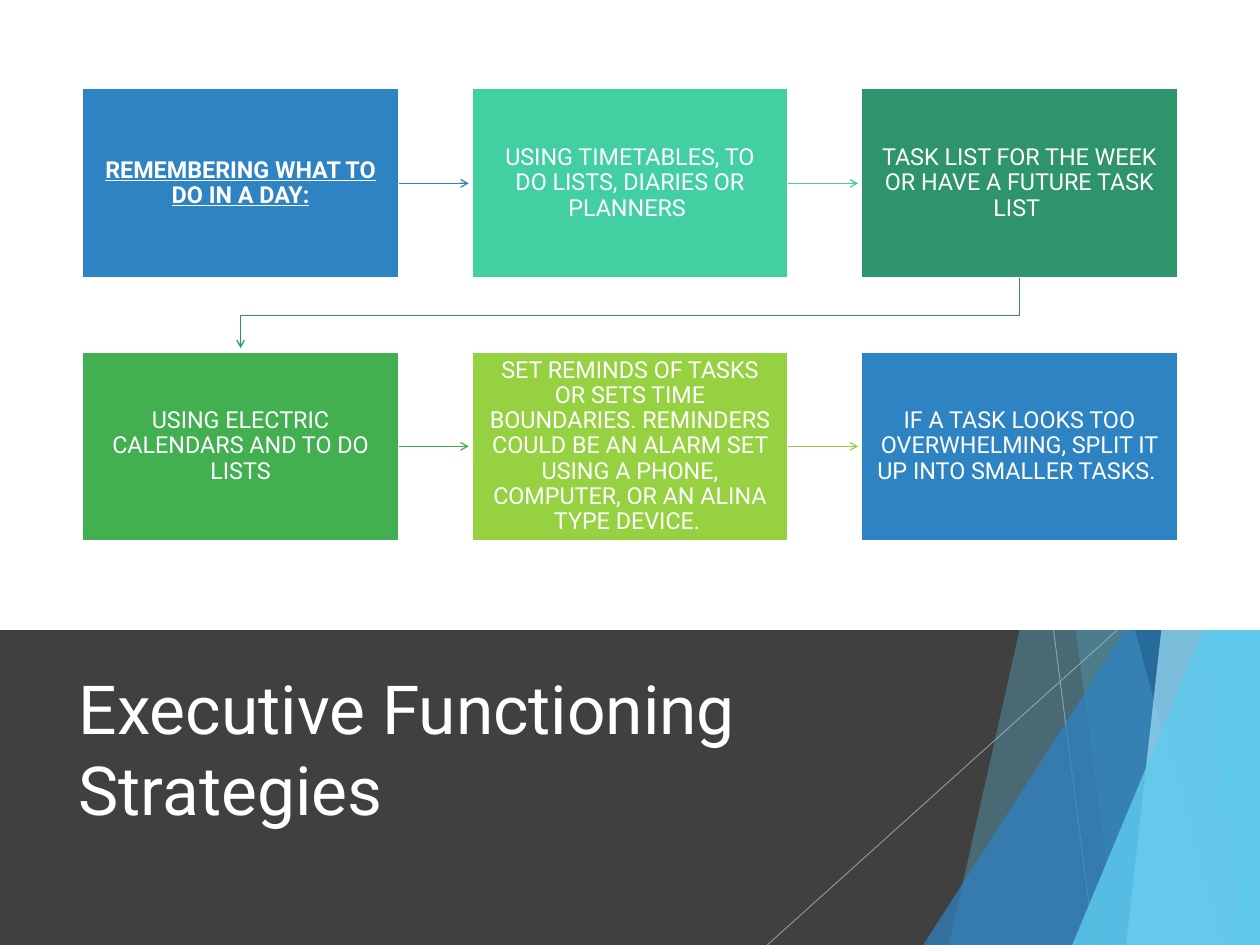
from dataclasses import dataclass

from lxml import etree
from pptx import Presentation
from pptx import util as u
from pptx.dml.color import RGBColor
from pptx.enum import shapes, text
from pptx.oxml.ns import qn

SLIDE_WIDTH, SLIDE_HEIGHT = 14.22, 10.67
BAND_TOP = SLIDE_HEIGHT * 2 / 3
BOX_WIDTH, BOX_HEIGHT = 3.57, 2.14
BOX_LEFT, BOX_TOP = 0.93, 1.0
COLUMNS = 3
COLUMN_STEP = (SLIDE_WIDTH - 2 * BOX_LEFT - BOX_WIDTH) / (COLUMNS - 1)
ROW_STEP = 2.97
ARROW_LENGTH = 0.79
WHITE = "FFFFFF"


@dataclass
class Step:
    wording: str
    color: str
    heading: bool = False


@dataclass
class Facet:
    """Translucent panel from a slanted left edge to the slide's right edge."""
    top_x: float
    bottom_x: float
    color: str
    opacity: int
    top: float = 0


STEPS = [
    Step("REMEMBERING WHAT TO DO IN A DAY:", "2E83C3", heading=True),
    Step("USING TIMETABLES, TO DO LISTS, DIARIES OR PLANNERS ", "42D0A2"),
    Step("TASK LIST FOR THE WEEK OR HAVE A FUTURE TASK LIST ", "2E946B"),
    Step("USING ELECTRIC CALENDARS AND TO DO LISTS", "42B051"),
    Step("SET REMINDS OF TASKS OR SETS TIME BOUNDARIES. REMINDERS COULD BE "
         "AN ALARM SET USING A PHONE, COMPUTER, OR AN ALINA TYPE DEVICE. ", "96D141"),
    Step("IF A TASK LOOKS TOO OVERWHELMING, SPLIT IT UP INTO SMALLER TASKS. ", "2E83C3"),
]

FACETS = [
    Facet(13.1, 10.71, "5FCBEF", 30),
    Facet(11.2, 12.61, "5FCBEF", 20),
    Facet(SLIDE_WIDTH, 10.42, "2E83C3", 72, top=4.74),
    Facet(10.89, 13.77, "226292", 70),
    Facet(13.9, 12.71, "9FE0F5", 70),
    Facet(12.76, 14.05, "5FCBEF", 65),
    Facet(SLIDE_WIDTH, 12.1, "5FCBEF", 80, top=5.58),
]

# Top and bottom x of the thin lines crossing the band
BAND_LINES = [(11.89, 12.35), (12.61, 8.66)]


def rgb(color: str) -> RGBColor:
    return RGBColor.from_string(color)


def set_opacity(shape, percent: int) -> None:
    color = next(shape._element.spPr.iter(qn("a:srgbClr")))
    etree.SubElement(color, qn("a:alpha")).set("val", str(percent * 1000))


def style_line(shape, color: str, width: float, arrow: bool = False) -> None:
    shape.line.color.rgb = rgb(color)
    shape.line.width = u.Pt(width)
    if arrow:
        line = shape.line._get_or_add_ln()
        etree.SubElement(line, qn("a:tailEnd")).set("type", "arrow")


def add_line(slide, start: tuple, end: tuple, color: str, width: float, arrow: bool = False):
    connector = slide.shapes.add_connector(
        shapes.MSO_CONNECTOR.STRAIGHT, *(u.Inches(value) for value in start + end))
    style_line(connector, color, width, arrow)
    etree.SubElement(connector._element.spPr, qn("a:effectLst"))
    return connector


def add_path(slide, points: list, closed: bool):
    corners = [(u.Inches(x), u.Inches(y)) for x, y in points]
    builder = slide.shapes.build_freeform(*corners[0])
    builder.add_line_segments(corners[1:], close=closed)
    shape = builder.convert_to_shape()
    shape.shadow.inherit = False
    return shape


def fill_plain(shape, color: str) -> None:
    shape.fill.solid()
    shape.fill.fore_color.rgb = rgb(color)
    shape.line.fill.background()


def add_preset(slide, kind, left: float, top: float, width: float, height: float, color: str):
    shape = slide.shapes.add_shape(
        kind, *(u.Inches(value) for value in (left, top, width, height)))
    shape.shadow.inherit = False
    fill_plain(shape, color)
    return shape


def write_text(shape, wording: str, *, size: float, align, color: str = WHITE,
               bold: bool = False, underline: bool = False,
               inset: float | None = None, spacing: float | None = None) -> None:
    frame = shape.text_frame
    frame.word_wrap = True
    frame.vertical_anchor = text.MSO_ANCHOR.MIDDLE
    if inset is not None:
        frame.margin_left = frame.margin_right = u.Inches(inset)
        frame.margin_top = frame.margin_bottom = u.Inches(inset)
    paragraph = frame.paragraphs[0]
    paragraph.alignment = align
    if spacing is not None:
        paragraph.line_spacing = spacing
    run = paragraph.add_run()
    run.text = wording
    run.font.name = "Roboto"
    run.font.size = u.Pt(size)
    run.font.color.rgb = rgb(color)
    run.font.bold = bold
    run.font.underline = underline


def add_facet(slide, facet: Facet) -> None:
    if facet.top_x == SLIDE_WIDTH:
        panel = add_preset(slide, shapes.MSO_SHAPE.ISOSCELES_TRIANGLE, facet.bottom_x, facet.top,
                           SLIDE_WIDTH - facet.bottom_x, SLIDE_HEIGHT - facet.top, facet.color)
        panel.adjustments[0] = 1
    else:
        panel = add_path(slide, [(facet.top_x, facet.top), (SLIDE_WIDTH, facet.top),
                                 (SLIDE_WIDTH, SLIDE_HEIGHT),
                                 (facet.bottom_x, SLIDE_HEIGHT)], closed=True)
        fill_plain(panel, facet.color)
    set_opacity(panel, facet.opacity)


def add_background(slide) -> None:
    rectangle = shapes.MSO_SHAPE.RECTANGLE
    add_preset(slide, rectangle, 0, BAND_TOP, SLIDE_WIDTH, SLIDE_HEIGHT - BAND_TOP, "404040")
    for top_x, bottom_x in BAND_LINES:
        line = add_line(slide, (top_x, BAND_TOP), (bottom_x, SLIDE_HEIGHT), "BFBFBF", 0.75)
        set_opacity(line, 70)
    for facet in FACETS:
        add_facet(slide, facet)
    # White panel behind the steps
    add_preset(slide, rectangle, 0, 0, SLIDE_WIDTH, BAND_TOP, WHITE)


def add_title(slide, wording: str) -> None:
    title = slide.shapes.add_textbox(
        u.Inches(0.79), u.Inches(7.42), u.Inches(10.03), u.Inches(2.05))
    write_text(title, wording, size=55, align=text.PP_ALIGN.LEFT)


def add_steps(slide) -> None:
    for index, step in enumerate(STEPS):
        row, column = divmod(index, COLUMNS)
        left, top = BOX_LEFT + column * COLUMN_STEP, BOX_TOP + row * ROW_STEP
        box = add_preset(slide, shapes.MSO_SHAPE.RECTANGLE, left, top,
                         BOX_WIDTH, BOX_HEIGHT, step.color)
        style_line(box, WHITE, 1.5)
        write_text(box, step.wording, size=19, align=text.PP_ALIGN.CENTER,
                   bold=step.heading, underline=step.heading, inset=0.18, spacing=0.9)

        # Arrow to the next step, turning back at the end of a row
        if index == len(STEPS) - 1:
            continue
        if column < COLUMNS - 1:
            right, middle = left + BOX_WIDTH, top + BOX_HEIGHT / 2
            arrow = add_line(slide, (right, middle), (right + ARROW_LENGTH, middle),
                             step.color, 1, arrow=True)
            arrow.begin_connect(box, 3)
        else:
            start_x, end_x = left + BOX_WIDTH / 2, BOX_LEFT + BOX_WIDTH / 2
            bottom = top + BOX_HEIGHT
            elbow = add_path(slide, [(start_x, bottom), (start_x, bottom + 0.42),
                                     (end_x, bottom + 0.42),
                                     (end_x, bottom + ARROW_LENGTH)], closed=False)
            elbow.fill.background()
            style_line(elbow, step.color, 1, arrow=True)


def main() -> None:
    presentation = Presentation()
    presentation.slide_width = u.Inches(SLIDE_WIDTH)
    presentation.slide_height = u.Inches(SLIDE_HEIGHT)
    slide = presentation.slides.add_slide(presentation.slide_layouts[6])
    add_background(slide)
    add_title(slide, "Executive Functioning Strategies")
    add_steps(slide)
    presentation.save("out.pptx")


if __name__ == "__main__":
    main()
